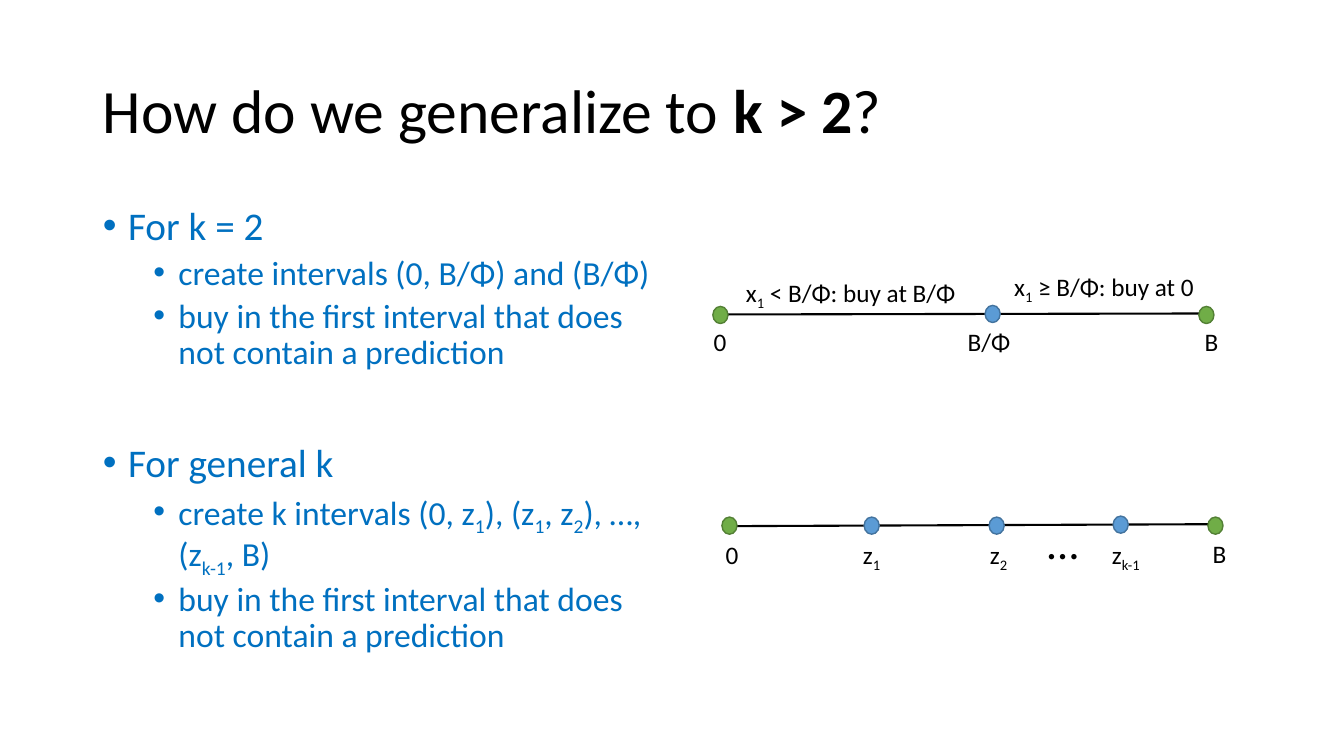
from dataclasses import dataclass

from lxml import etree
from pptx import Presentation
from pptx.dml.color import RGBColor
from pptx.enum.shapes import MSO_CONNECTOR, MSO_SHAPE
from pptx.enum.text import MSO_ANCHOR, MSO_AUTO_SIZE, PP_ALIGN
from pptx.oxml.ns import qn
from pptx.util import Inches, Pt

LEFT, MIDDLE, TOP = PP_ALIGN.LEFT, MSO_ANCHOR.MIDDLE, MSO_ANCHOR.TOP
NO_FIT = MSO_AUTO_SIZE.NONE
STRAIGHT, OVAL = MSO_CONNECTOR.STRAIGHT, MSO_SHAPE.OVAL


@dataclass(frozen=True)
class Theme:
    font: str = "Calibri"
    black: str = "000000"
    blue: str = "0070C0"
    end: tuple = ("70AD47", "538035")
    cut: tuple = ("5B9BD5", "43739E")
    title: int = 44
    levels: tuple = (28, 24)
    label: int = 18
    dots: int = 32


theme = Theme()


def add_runs(para, text, size, color):
    """Add text run by run; the parts between bars are subscripts."""
    for i, part in enumerate(text.split("|")):
        if not part:
            continue
        run = para.add_run()
        run.text = part
        run.font.name = theme.font
        run.font.size = Pt(size)
        run.font.color.rgb = RGBColor.from_string(color)
        if i % 2:
            run._r.get_or_add_rPr().set("baseline", "-25000")


def place(shape, left, top, width, height):
    shape.left, shape.top = Inches(left), Inches(top)
    shape.width, shape.height = Inches(width), Inches(height)


prs = Presentation()
prs.slide_width, prs.slide_height = Inches(13.33), Inches(7.5)
slide = prs.slides.add_slide(prs.slide_layouts[1])

# Title
title = slide.shapes.title
place(title, 0.92, 0.4, 11.5, 1.45)
frame = title.text_frame
frame.auto_size = NO_FIT
frame.vertical_anchor = MIDDLE
para = frame.paragraphs[0]
para.alignment = LEFT
para.line_spacing = 0.9
for text, bold in (("How do we generalize to ", False), ("k > 2", True), ("?", False)):
    add_runs(para, text, theme.title, theme.black)
    para.runs[-1].font.bold = bold

# List: level, space before, text
buy = "buy in the first interval that does not contain a prediction"
items = [
    (0, 10, "For k = 2"),
    (1, 5, "create intervals (0, B/Φ) and (B/Φ)"),
    (1, 5, buy),
    (0, 51, "For general k"),
    (1, 5, "create k intervals (0, z|1|), (z|1|, z|2|), …, (z|k-1|, B)"),
    (1, 5, buy),
]
body = slide.placeholders[1]
place(body, 0.92, 2, 5.67, 4.76)
frame = body.text_frame
frame.auto_size = NO_FIT
frame.vertical_anchor = TOP
for i, (level, space, text) in enumerate(items):
    para = frame.add_paragraph() if i else frame.paragraphs[0]
    para.level = level
    para.line_spacing = 0.9
    para.space_before = Pt(space)
    props = para._p.get_or_add_pPr()
    props.set("marL", str(Inches(0.25 + 0.5 * level)))
    props.set("indent", str(Inches(-0.25)))
    etree.SubElement(props, qn("a:buFont")).set("typeface", "Arial")
    etree.SubElement(props, qn("a:buChar")).set("char", "•")
    add_runs(para, text, theme.levels[level], theme.blue)

# Number lines: ends of the line, dots (left, top, colours),
# labels (left, top, width, height, size, text)
small = theme.label
scales = [
    (
        (7.15, 3.12, 12.01, 3.11),
        [(7.07, 3.04, theme.end), (11.89, 3.04, theme.end), (9.77, 3.03, theme.cut)],
        [
            (6.98, 3.19, 0.33, 0.4, small, "0"),
            (11.85, 3.19, 0.34, 0.4, small, "B"),
            (9.5, 3.19, 0.63, 0.4, small, "B/Φ"),
            (7.3, 2.7, 2.37, 0.4, small, "x|1| < B/Φ: buy at B/Φ"),
            (9.96, 2.64, 2.01, 0.4, small, "x|1| ≥ B/Φ: buy at 0"),
        ],
    ),
    (
        (7.23, 5.22, 12.1, 5.2),
        [
            (7.16, 5.13, theme.end),
            (11.98, 5.13, theme.end),
            (8.57, 5.13, theme.cut),
            (9.81, 5.13, theme.cut),
            (11.04, 5.12, theme.cut),
        ],
        [
            (7.1, 5.3, 0.33, 0.4, small, "0"),
            (11.93, 5.29, 0.34, 0.4, small, "B"),
            (8.46, 5.3, 0.39, 0.4, small, "z|1|"),
            (9.72, 5.3, 0.39, 0.4, small, "z|2|"),
            (10.93, 5.3, 0.52, 0.4, small, "z|k-1|"),
            (10.29, 5.06, 0.51, 0.64, theme.dots, "…"),
        ],
    ),
]
for ends, dots, labels in scales:
    shapes = slide.shapes.add_group_shape().shapes
    line = shapes.add_connector(STRAIGHT, *map(Inches, ends))
    line.line.color.rgb = RGBColor.from_string(theme.black)
    line.line.width = Pt(1.5)
    etree.SubElement(line._element.spPr, qn("a:effectLst"))
    for left, top, (fill, edge) in dots:
        dot = shapes.add_shape(OVAL, *map(Inches, (left, top, 0.15, 0.17)))
        dot.shadow.inherit = False
        dot.fill.solid()
        dot.fill.fore_color.rgb = RGBColor.from_string(fill)
        dot.line.color.rgb = RGBColor.from_string(edge)
        dot.line.width = Pt(1)
    for *area, size, text in labels:
        box = shapes.add_textbox(*map(Inches, area))
        box.text_frame.word_wrap = False
        add_runs(box.text_frame.paragraphs[0], text, size, theme.black)

prs.save("out.pptx")
